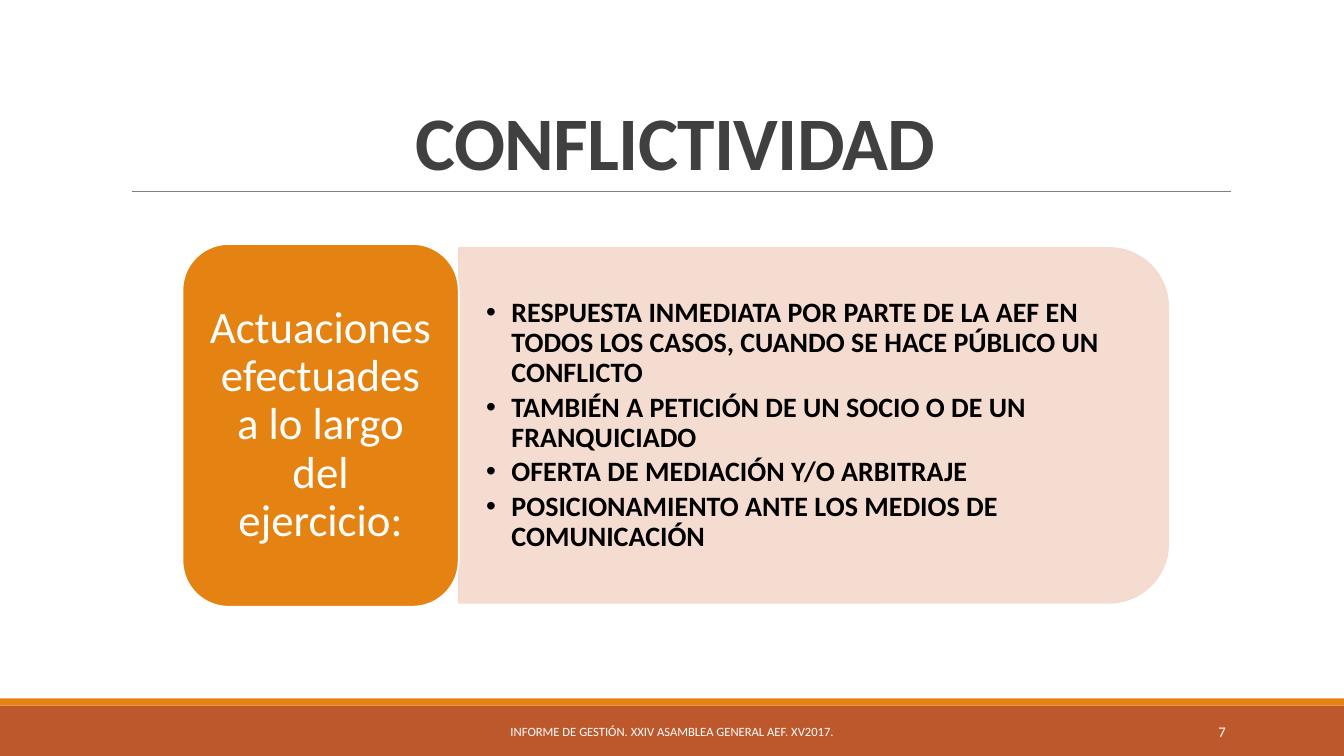
from dataclasses import dataclass

from lxml import etree
from pptx import Presentation
from pptx.dml.color import RGBColor
from pptx.enum.shapes import MSO_CONNECTOR, MSO_SHAPE
from pptx.enum.text import MSO_ANCHOR, PP_ALIGN
from pptx.oxml.ns import qn
from pptx.util import Cm, Pt

RECTANGLE = MSO_SHAPE.RECTANGLE
ROUNDED = MSO_SHAPE.ROUNDED_RECTANGLE
ROUNDED_TOP = MSO_SHAPE.ROUND_2_SAME_RECTANGLE
STRAIGHT = MSO_CONNECTOR.STRAIGHT
LEFT, CENTER, RIGHT = PP_ALIGN.LEFT, PP_ALIGN.CENTER, PP_ALIGN.RIGHT
MIDDLE, BOTTOM = MSO_ANCHOR.MIDDLE, MSO_ANCHOR.BOTTOM


@dataclass(frozen=True)
class Theme:
    font: str = "Calibri"
    orange: str = "E48312"
    rust: str = "BD582C"
    blush: str = "F5D9CC"
    charcoal: str = "404040"
    gray: str = "808080"
    black: str = "000000"
    white: str = "FFFFFF"
    title_size: float = 54
    card_size: float = 32
    bullet_size: float = 20
    number_size: float = 10.5
    footer_size: float = 9


THEME = Theme()
SLIDE_WIDTH, SLIDE_HEIGHT = 33.87, 19.05
FOOTER_TOP, FOOTER_HEIGHT = 17.93, 1.02
ACTIONS = [
    "RESPUESTA INMEDIATA POR PARTE DE LA AEF EN TODOS LOS CASOS, "
    "CUANDO SE HACE PÚBLICO UN CONFLICTO",
    "TAMBIÉN A PETICIÓN DE UN SOCIO O DE UN FRANQUICIADO",
    "OFERTA DE MEDIACIÓN Y/O ARBITRAJE",
    "POSICIONAMIENTO ANTE LOS MEDIOS DE COMUNICACIÓN",
]


def set_attributes(target, values):
    for name, value in values.items():
        setattr(target, name, value)


def add_block(slide, kind, box, fill, line=None):
    shape = slide.shapes.add_shape(kind, *map(Cm, box))
    shape.shadow.inherit = False
    shape.fill.solid()
    shape.fill.fore_color.rgb = RGBColor.from_string(fill)
    if line:
        shape.line.color.rgb = RGBColor.from_string(line)
        shape.line.width = Pt(1.25)
    else:
        shape.line.fill.background()
    return shape


def set_opacity(shape, percent):
    """Apply one opacity to both the fill and the line of a shape."""
    for color in shape.element.spPr.iter(qn("a:srgbClr")):
        etree.SubElement(color, qn("a:alpha"), val=str(percent * 1000))


def add_rule(slide, left, right, top):
    rule = slide.shapes.add_connector(STRAIGHT, Cm(left), Cm(top), Cm(right), Cm(top))
    rule.line.color.rgb = RGBColor.from_string(THEME.gray)
    rule.line.width = Pt(0.5)
    etree.SubElement(rule.element.spPr, qn("a:effectLst"))


def write_text(shape, lines, size, color, align=CENTER, anchor=MIDDLE,
               margins=(0.25, 0.13), spacing=1.0, after=0, bold=False):
    """Fill a shape with one paragraph per line; margins are (side, top) in cm."""
    frame = shape.text_frame
    side, top = map(Cm, margins)
    set_attributes(frame, {
        "word_wrap": True, "vertical_anchor": anchor,
        "margin_left": side, "margin_right": side,
        "margin_top": top, "margin_bottom": top,
    })
    for index, line in enumerate(lines):
        paragraph = frame.add_paragraph() if index else frame.paragraphs[0]
        set_attributes(paragraph, {
            "alignment": align, "line_spacing": spacing, "space_after": Pt(after),
        })
        run = paragraph.add_run()
        run.text = line
        set_attributes(run.font, {"name": THEME.font, "size": Pt(size), "bold": bold})
        run.font.color.rgb = RGBColor.from_string(color)
    return frame.paragraphs


def add_text(slide, box, lines, size, color, **layout):
    return write_text(slide.shapes.add_textbox(*map(Cm, box)), lines, size, color, **layout)


def add_bullet(paragraph, indent):
    properties = paragraph._p.get_or_add_pPr()
    properties.set("marL", str(Cm(indent)))
    properties.set("indent", str(-Cm(indent)))
    etree.SubElement(properties, qn("a:buFont"), typeface="Arial")
    etree.SubElement(properties, qn("a:buChar"), char="•")


def add_title(slide):
    paragraphs = add_text(slide, (3.05, 0.79, 27.94, 4.03), ["CONFLICTIVIDAD"],
                          THEME.title_size, THEME.charcoal,
                          anchor=BOTTOM, spacing=0.85, bold=True)
    paragraphs[0].runs[0].font._element.set("spc", "-50")
    add_rule(slide, 3.33, 31.01, 4.83)


def add_actions(slide):
    panel = add_block(slide, ROUNDED_TOP, (16.03, 1.78, 8.94, 17.88),
                      THEME.blush, THEME.blush)
    panel.rotation = 90
    set_opacity(panel, 90)
    bullets = add_text(slide, (11.56, 6.68, 17.45, 8.08), ACTIONS,
                       THEME.bullet_size, THEME.black, align=LEFT,
                       margins=(0.69, 0.36), spacing=0.9, after=3, bold=True)
    for paragraph in bullets:
        add_bullet(paragraph, 0.64)
    card = add_block(slide, ROUNDED, (4.6, 6.15, 6.96, 9.14), THEME.orange, THEME.white)
    write_text(card, ["Actuaciones efectuades a lo largo del ejercicio:"],
               THEME.card_size, THEME.white, margins=(0.33, 0.18), spacing=0.9)


def add_footer(slide):
    add_block(slide, RECTANGLE, (0, 17.78, SLIDE_WIDTH, 1.27), THEME.rust)
    add_block(slide, RECTANGLE, (0, 17.6, SLIDE_WIDTH, 0.18), THEME.orange)
    add_text(slide, (10.24, FOOTER_TOP, 13.39, FOOTER_HEIGHT),
             ["INFORME DE GESTIÓN. XXIV ASAMBLEA GENERAL AEF. XV2017."],
             THEME.footer_size, THEME.white)
    add_text(slide, (27.51, FOOTER_TOP, 3.63, FOOTER_HEIGHT), ["7"],
             THEME.number_size, THEME.white, align=RIGHT)


def main():
    presentation = Presentation()
    presentation.slide_width = Cm(SLIDE_WIDTH)
    presentation.slide_height = Cm(SLIDE_HEIGHT)
    slide = presentation.slides.add_slide(presentation.slide_layouts[6])
    add_title(slide)
    add_actions(slide)
    add_footer(slide)
    presentation.save("out.pptx")


if __name__ == "__main__":
    main()
